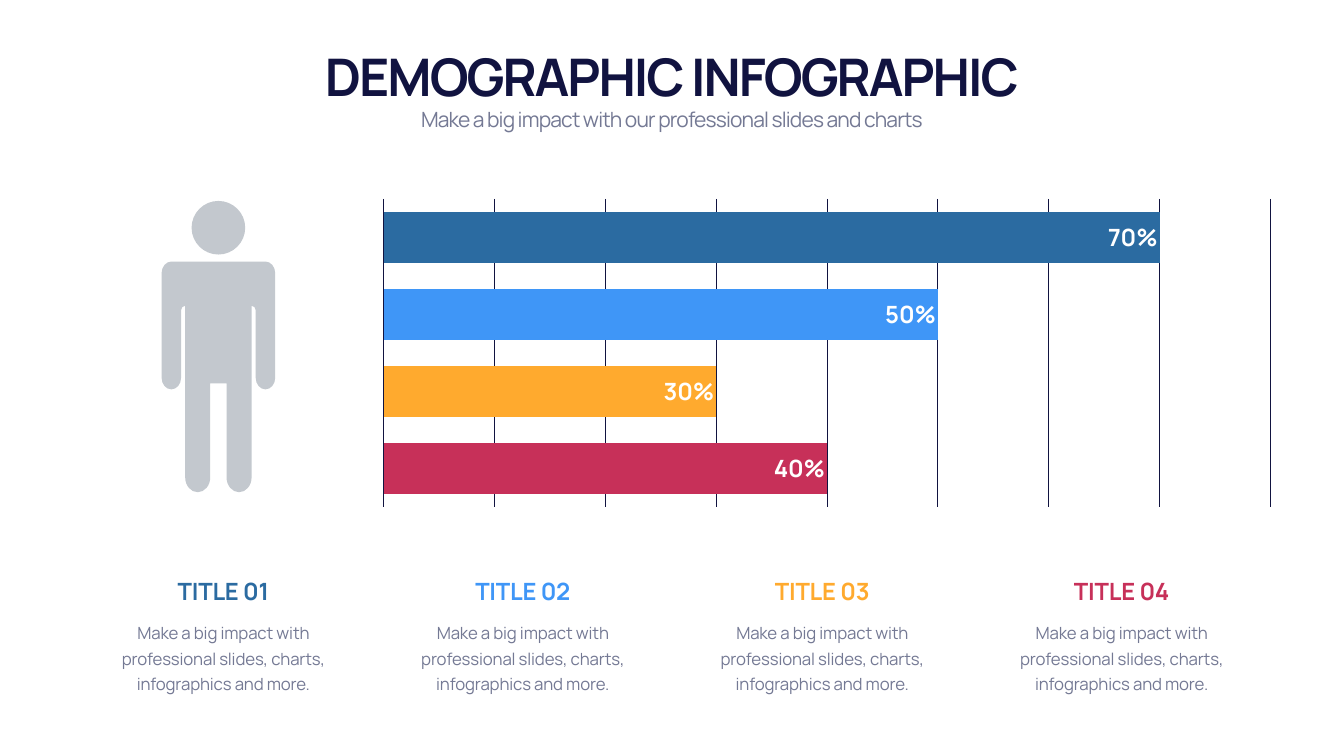
from dataclasses import dataclass

from lxml import etree
from pptx import Presentation
from pptx import util as u
from pptx.chart.data import CategoryChartData
from pptx.dml.color import RGBColor
from pptx.enum import chart as ch
from pptx.enum import text
from pptx.oxml.ns import qn

NAVY = RGBColor(0x11, 0x13, 0x40)
SLATE = RGBColor(0x74, 0x79, 0x94)
SILVER = RGBColor(0xC3, 0xC8, 0xCE)
WHITE = RGBColor(0xFF, 0xFF, 0xFF)
BLUE = RGBColor(0x2B, 0x6B, 0xA1)
SKY = RGBColor(0x3F, 0x96, 0xF7)
AMBER = RGBColor(0xFF, 0xAA, 0x2E)
CRIMSON = RGBColor(0xC7, 0x30, 0x59)

COLUMN_LEFT, COLUMN_STEP, COLUMN_WIDTH = 8.18, 22.28, 16.88
BODY = "Make a big impact with professional slides, charts, infographics and more."

ROUNDNESS = 0.55
FLIP = {"": "", "h": "v", "v": "h"}
HALF_BODY = [
    (16.1, 20.8, ""), (19.5, 24.8, "h"), (19.5, 60.7, ""), (16.15, 64.7, "v"),
    (12.8, 60.7, "h"), (12.8, 37.5, ""), (11.4, 36, "v"), (11.4, 94.9, ""),
    (7.1, 100, "v"), (2.8, 94.9, "h"), (2.8, 62.6, ""),
]
HALF_HEAD = [(0, 0, ""), (9.2, 9.2, "h"), (0, 18.4, "v")]


def mirrored(half):
    bends = [FLIP[bend] for _, _, bend in half[1:]] + [""]
    other = [(-px, py, bend) for (px, py, _), bend in zip(half, bends)][::-1]
    return half + (other if half[-1][0] else other[1:])


@dataclass
class Deck:
    """Slide style and drawing methods, with lengths in percent of the slide."""

    prs: object
    s: object
    font: str = "Manrope"

    def x(self, share):
        return round(self.prs.slide_width * share / 100)

    def y(self, share):
        return round(self.prs.slide_height * share / 100)

    def box(self, left, top, width, height):
        return self.x(left), self.y(top), self.x(width), self.y(height)

    def style(self, font, size, color, bold):
        font.name, font.size, font.bold = self.font, u.Pt(size), bold
        font.color.rgb = color

    def label(self, place, words, size, color, spacing, bold=False, leading=None):
        tf = self.s.shapes.add_textbox(*self.box(*place)).text_frame
        tf.word_wrap = True
        tf.auto_size = text.MSO_AUTO_SIZE.SHAPE_TO_FIT_TEXT
        tf.vertical_anchor = text.MSO_ANCHOR.BOTTOM if bold else text.MSO_ANCHOR.TOP
        p = tf.paragraphs[0]
        p.alignment = text.PP_ALIGN.CENTER
        if leading:
            p.line_spacing = u.Pt(leading)
        r = p.add_run()
        r.text = words
        self.style(r.font, size, color, bold)
        r.font._element.set("spc", str(round(spacing * 100)))

    def person(self, center, top, height, color):
        unit = self.y(height) / 100
        outlines = [mirrored(HALF_BODY), mirrored(HALF_HEAD)]
        body, head = [
            [(self.x(center) + px * unit, self.y(top) + py * unit) for px, py, _ in outline]
            for outline in outlines
        ]
        builder = self.s.shapes.build_freeform(*body[0])
        builder.add_line_segments(body[1:], close=True)
        builder.move_to(*head[0])
        builder.add_line_segments(head[1:], close=True)
        sp = builder.convert_to_shape()
        self.bend(sp, [bend for outline in outlines for _, _, bend in outline[1:]])
        sp.shadow.inherit = False
        sp.fill.solid()
        sp.fill.fore_color.rgb = color
        sp.line.fill.background()

    def bend(self, sp, bends):
        for line, bend in zip(list(sp._element.iter(qn("a:lnTo"))), bends):
            if not bend:
                continue
            start, end = [
                (int(pt.get("x")), int(pt.get("y"))) for pt in (line.getprevious()[-1], line[0])
            ]
            corner = (end[0], start[1]) if bend == "h" else (start[0], end[1])
            curve = etree.Element(qn("a:cubicBezTo"))
            for near in (start, end):
                px, py = [round(n + ROUNDNESS * (c - n)) for n, c in zip(near, corner)]
                etree.SubElement(curve, qn("a:pt"), x=str(px), y=str(py))
            curve.append(line[0])
            line.getparent().replace(line, curve)

    def bars(self, place, values, colors, plot_area):
        data = CategoryChartData(number_format="0%")
        data.categories = [str(i + 1) for i in range(len(values))]
        data.add_series("Series 1", values)
        kind = ch.XL_CHART_TYPE.BAR_CLUSTERED
        chart = self.s.shapes.add_chart(kind, *self.box(*place), data).chart
        chart.has_title = chart.has_legend = False
        self.style(chart.font, 34, WHITE, True)
        chart.category_axis.visible = False
        axis = chart.value_axis
        axis.visible = False
        axis.minimum_scale, axis.maximum_scale, axis.major_unit = 0, 0.8, 0.1
        axis.tick_labels.number_format = "0%"
        axis.tick_labels.number_format_is_linked = False
        grid = axis.major_gridlines.format.line
        grid.color.rgb, grid.width = NAVY, u.Pt(1)
        plot = chart.plots[0]
        plot.gap_width, plot.vary_by_categories = 50, False
        series = plot.series[0]
        series.format.fill.solid()
        series.format.fill.fore_color.rgb = colors[-1]
        for i, color in enumerate(colors[:-1]):
            fill = series.points[i].format.fill
            fill.solid()
            fill.fore_color.rgb = color
        labels = series.data_labels
        labels.show_value = True
        labels.position = ch.XL_LABEL_POSITION.INSIDE_END
        labels.number_format, labels.number_format_is_linked = "0%", False
        self.style(labels.font, 34, WHITE, True)
        self.inner_layout(chart, plot_area)

    def inner_layout(self, chart, plot_area):
        area = chart._chartSpace.chart.plotArea
        for old in area.findall(qn("c:layout")):
            area.remove(old)
        layout = etree.Element(qn("c:layout"))
        manual = etree.SubElement(layout, qn("c:manualLayout"))
        settings = [("layoutTarget", "inner"), ("xMode", "edge"), ("yMode", "edge")]
        for tag, value in settings + list(zip("xywh", plot_area)):
            etree.SubElement(manual, qn(f"c:{tag}")).set("val", str(value))
        area.insert(0, layout)


def main():
    prs = Presentation()
    prs.slide_width, prs.slide_height = u.Inches(26.66), u.Inches(15)
    deck = Deck(prs, prs.slides.add_slide(prs.slide_layouts[6]))

    deck.person(16.25, 26.58, 38.53, SILVER)
    deck.label((6.23, 5.47, 87.51, 9), "DEMOGRAPHIC INFOGRAPHIC", 74, NAVY, -2.9, bold=True)
    subtitle = "Make a big impact with our professional slides and charts"
    deck.label((6.23, 13.8, 87.51, 4.07), subtitle, 30, SLATE, -1.2)

    colors = [BLUE, SKY, AMBER, CRIMSON]
    for i, color in enumerate(colors):
        left = COLUMN_LEFT + i * COLUMN_STEP
        deck.label((left, 81.42, COLUMN_WIDTH, 10.6), BODY, 24, SLATE, -0.2, leading=36)
        title = f"TITLE {i + 1:02}"
        deck.label((left, 75.87, COLUMN_WIDTH, 4.47), title, 34, color, -0.3, bold=True)

    values = [0.4, 0.3, 0.5, 0.7]
    deck.bars((24.33, 26.25, 70.22, 44.87), values, colors[::-1], (0.06, 0, 0.94, 0.91))
    prs.save("out.pptx")


if __name__ == "__main__":
    main()
